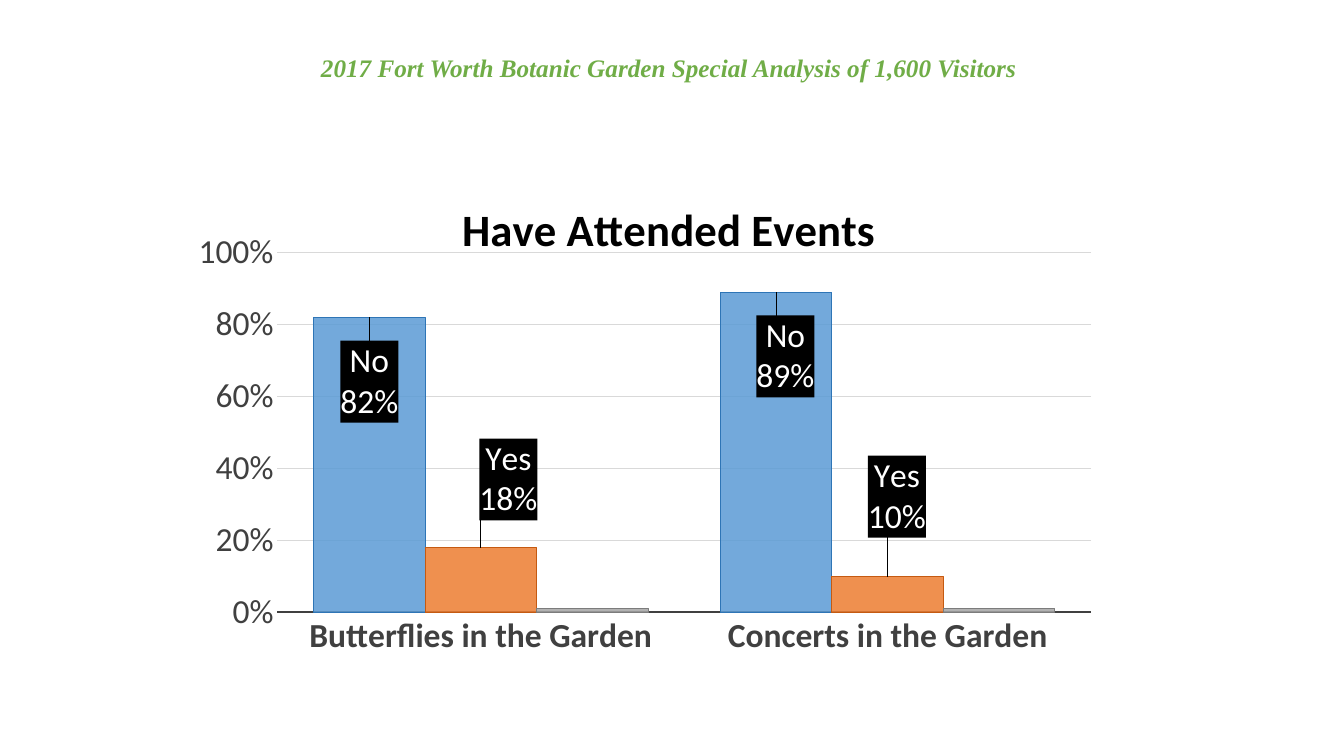
from pptx import Presentation
from pptx.chart.data import CategoryChartData
from pptx.dml.color import RGBColor
from pptx.enum.chart import XL_CHART_TYPE as ChartType, XL_LABEL_POSITION as LabelPos
from pptx.enum.chart import XL_TICK_MARK as TickMark
from pptx.enum.text import MSO_ANCHOR as Anchor, PP_ALIGN as Align
from pptx.oxml import parse_xml
from pptx.oxml.ns import nsdecls, qn
from pptx.util import Pt

# Content
HEADING = "2017 Fort Worth Botanic Garden Special Analysis of 1,600 Visitors"
CHART_TITLE = "Have Attended Events"
EVENTS = ["Butterflies in the Garden", "Concerts in the Garden"]
# Label offsets are shares of the chart's width and height
ANSWERS = [
    dict(name="Series 1", values=(0.82, 0.89), fill="blue", edge="dark_blue",
         word="No", offsets=[(0, 0.19), (0.01, 0.19)], leaders=1),
    dict(name="Series 2", values=(0.18, 0.1), fill="orange", edge="dark_orange",
         word="Yes", offsets=[(0.03, -0.04), (0.01, -0.06)], leaders=0),
    dict(name="Series 3", values=(0.01, 0.01), fill="gray", edge="dark_gray",
         word=None, offsets=[], leaders=0),
]
COLORS = {
    "white": "FFFFFF", "black": "000000", "green": "70AD47", "text": "404040",
    "grid": "D9D9D9", "blue": "5B9BD5", "dark_blue": "2E75B6",
    "orange": "ED7D31", "dark_orange": "C55A11",
    "gray": "A5A5A5", "dark_gray": "7C7C7C",
}
BAR_OPACITY = 85


def rgb(color):
    return RGBColor.from_string(COLORS[color])


def format_font(font, size, color, name="Calibri", bold=False, italic=False):
    font.size, font.name, font.bold, font.italic = Pt(size), name, bold, italic
    font.color.rgb = rgb(color)


def write(frame, text, align=Align.CENTER, **style):
    """Fill a text frame with one paragraph per line."""
    for number, line in enumerate(text.split("\n")):
        paragraph = frame.add_paragraph() if number else frame.paragraphs[0]
        paragraph.alignment = align
        run = paragraph.add_run()
        run.text = line
        format_font(run.font, **style)


def style_line(line, color, width):
    line.color.rgb = rgb(color)
    line.width = Pt(width)


def manual_layout(**parts):
    items = "".join(f'<c:{tag} val="{value}"/>' for tag, value in parts.items())
    return parse_xml(f'<c:layout {nsdecls("c")}><c:manualLayout>{items}'
                     "</c:manualLayout></c:layout>")


def drop_layout(parent):
    for layout in parent.findall(qn("c:layout")):
        parent.remove(layout)


deck = Presentation()
deck.slide_width, deck.slide_height = Pt(960), Pt(540)
slide = deck.slides.add_slide(deck.slide_layouts[5])

# Heading
heading = slide.shapes.title
heading.left, heading.top, heading.width, heading.height = Pt(0), Pt(0.7), Pt(960), Pt(88)
heading.fill.solid()
heading.fill.fore_color.rgb = rgb("white")
frame = heading.text_frame
frame.vertical_anchor = Anchor.MIDDLE
frame.margin_top, frame.margin_right = Pt(10), Pt(12)
write(frame, HEADING, size=18, color="green", name="Times New Roman", bold=True, italic=True)

# Chart
data = CategoryChartData(number_format="0%")
data.categories = EVENTS
for answer in ANSWERS:
    data.add_series(answer["name"], answer["values"])
chart = slide.shapes.add_chart(ChartType.COLUMN_CLUSTERED, Pt(141.8), Pt(113.8),
                               Pt(658), Pt(411), data).chart
format_font(chart.font, 10, "black")
chart.has_legend = False
plot = chart.plots[0]
plot.gap_width, plot.overlap, plot.vary_by_categories = 65, 0, False
area = chart.element.find(".//" + qn("c:plotArea"))
drop_layout(area)
area.insert(0, manual_layout(layoutTarget="inner", xMode="edge", yMode="edge",
                             x=0.084, y=0.162, w=0.885, h=0.625))

# Chart title
write(chart.chart_title.text_frame, CHART_TITLE, size=32, color="black", bold=True)
chart.chart_title.include_in_layout = False
title = chart.element.find(".//" + qn("c:title"))
drop_layout(title)
title.find(qn("c:tx")).addnext(manual_layout(xMode="edge", yMode="edge", x=0.276, y=0.054))

# Axes
events, share = chart.category_axis, chart.value_axis
for axis in (events, share):
    axis.major_tick_mark = axis.minor_tick_mark = TickMark.NONE
    format_font(axis.tick_labels.font, 24, "text", bold=axis is events)
style_line(events.format.line, "text", 1.5)
share.format.line.fill.background()
share.minimum_scale, share.maximum_scale, share.major_unit = 0, 1, 0.2
share.tick_labels.number_format = "0%"
share.tick_labels.number_format_is_linked = False
share.has_major_gridlines = True
style_line(share.major_gridlines.format.line, "grid", 0.75)

# Bars and their labels
for answer, series in zip(ANSWERS, plot.series):
    series.format.fill.solid()
    series.format.fill.fore_color.rgb = rgb(answer["fill"])
    bar_color = series.format.fill._xPr.find(".//" + qn("a:srgbClr"))
    bar_color.append(parse_xml(f'<a:alpha {nsdecls("a")} val="{BAR_OPACITY * 1000}"/>'))
    style_line(series.format.line, answer["edge"], 0.75)
    if not answer["word"]:
        continue
    labels = series.data_labels
    format_font(labels.font, 24, "white")
    labels.number_format, labels.number_format_is_linked = "0%", False
    labels.show_value = True
    for index, (dx, dy) in enumerate(answer["offsets"]):
        label = series.points[index].data_label
        write(label.text_frame, f'{answer["word"]}\n{answer["values"][index]:.0%}',
              size=24, color="white")
        label.position = LabelPos.OUTSIDE_END
    label_group = series._element.find(qn("c:dLbls"))
    for label, (dx, dy) in zip(label_group.findall(qn("c:dLbl")), answer["offsets"]):
        drop_layout(label)
        label.find(qn("c:idx")).addnext(manual_layout(x=dx, y=dy))
        for old in label.findall(qn("c:spPr")):
            label.remove(old)
        label.find(qn("c:tx")).addnext(parse_xml(
            f'<c:spPr {nsdecls("c", "a")}><a:solidFill><a:srgbClr val="{COLORS["black"]}"/>'
            "</a:solidFill></c:spPr>"))
    label_group.append(parse_xml(
        f'<c:extLst {nsdecls("c")}><c:ext uri="{{CE6537A1-D6FC-4f65-9D91-7224C49458BB}}" '
        'xmlns:c15="http://schemas.microsoft.com/office/drawing/2012/chart">'
        f'<c15:showLeaderLines val="{answer["leaders"]}"/></c:ext></c:extLst>'))

deck.save("out.pptx")
